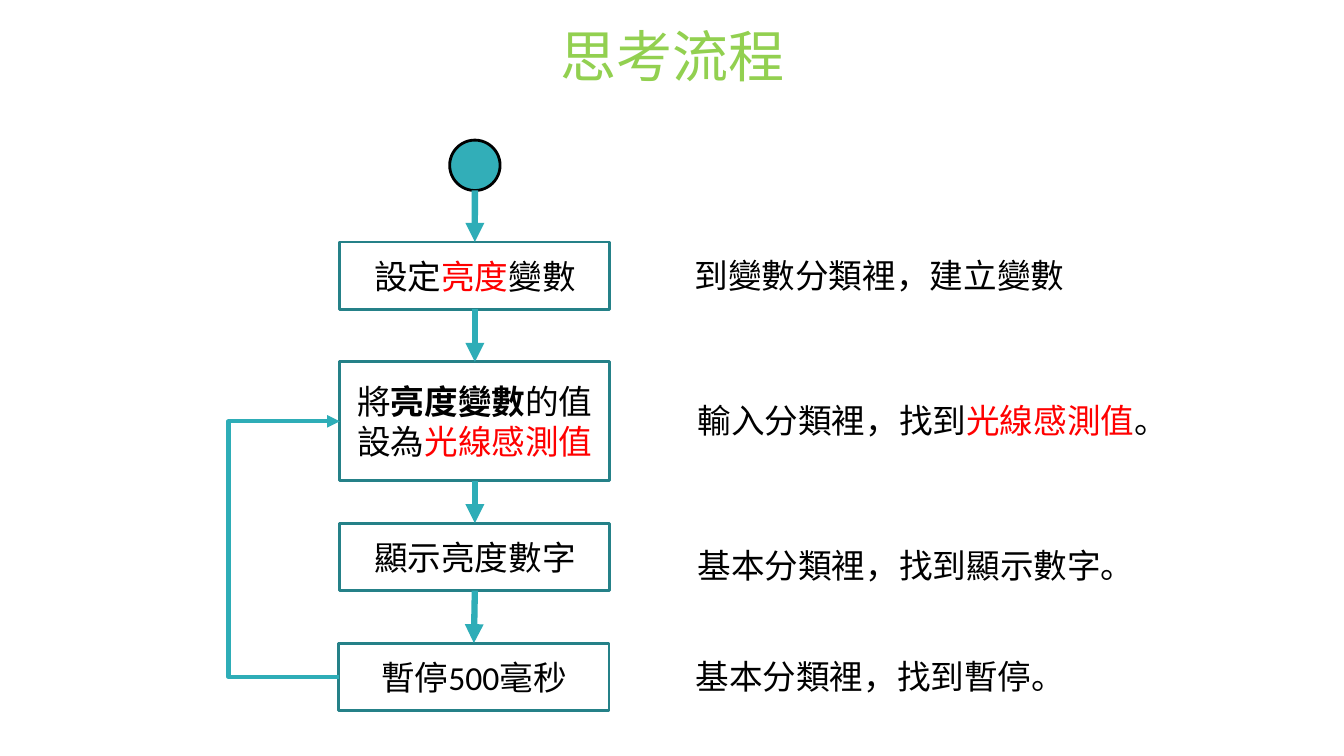
from lxml.etree import SubElement
from pptx import Presentation
from pptx.dml.color import RGBColor
from pptx.enum.shapes import MSO_CONNECTOR, MSO_SHAPE
from pptx.enum.text import MSO_ANCHOR, MSO_AUTO_SIZE, PP_ALIGN
from pptx.oxml.ns import qn
from pptx.util import Inches, Pt

WIDTH, HEIGHT = Inches(13.33), Inches(7.5)
FONT = "Calibri"
GREEN = RGBColor(0x92, 0xD0, 0x50)
TEAL = RGBColor(0x32, 0xAE, 0xB8)
ARROW = RGBColor(0x2E, 0xAD, 0xB7)
EDGE = RGBColor(0x25, 0x81, 0x88)
BLACK = RGBColor(0, 0, 0)
RED = RGBColor(0xFF, 0, 0)

# Places are percentages of the slide's width and height
STEP_WIDTH, ROW_HEIGHT = 20.1, 8.93
NOTE_HEIGHT = 6.67
LOOP_LEFT = 17.1

# Connection sites of a rectangle
TOP, LEFT, BOTTOM = 0, 1, 2

# Each step: left, top, height, spans of (text, colour, bold)
STEPS = [
    (25.28, 32, ROW_HEIGHT,
     [("設定", BLACK, False), ("亮度", RED, False), ("變數", BLACK, False)]),
    (25.28, 47.87, 15.73,
     [("將", BLACK, False), ("亮度變數", BLACK, True),
      ("的值設為", BLACK, False), ("光線感測值", RED, False)]),
    (25.28, 69.2, ROW_HEIGHT, [("顯示亮度數字", BLACK, False)]),
    (25.21, 85.07, ROW_HEIGHT, [("暫停500毫秒", BLACK, False)]),
]

# Each note: left, top, width, spans
NOTES = [
    (50.94, 33.07, 30.08, [("到變數分類裡，建立變數", BLACK, False)]),
    (51.16, 52.27, 36.83,
     [("輸入分類裡，找到", BLACK, False), ("光線感測值", RED, False),
      ("。", BLACK, False)]),
    (51.16, 71.47, 35.41, [("基本分類裡，找到顯示數字。", BLACK, False)]),
    (51.01, 86.13, 29.26, [("基本分類裡，找到暫停。", BLACK, False)]),
]


def across(percent):
    return round(WIDTH * percent / 100)


def down(percent):
    return round(HEIGHT * percent / 100)


def place(left, top, width, height):
    return across(left), down(top), across(width), down(height)


def write(box, spans, size=24, align=PP_ALIGN.LEFT):
    para = box.text_frame.paragraphs[0]
    para.alignment = align
    for text, colour, bold in spans:
        span = para.add_run()
        span.text = text
        span.font.name = FONT
        span.font.size = Pt(size)
        span.font.bold = bold
        span.font.color.rgb = colour


def add_title(page, text):
    box = page.shapes.add_textbox(*place(6.9, 1.73, 86.27, 11.07))
    box.text_frame.word_wrap = True
    box.text_frame.vertical_anchor = MSO_ANCHOR.MIDDLE
    write(box, [(text, GREEN, False)], 40, PP_ALIGN.CENTER)


def add_note(page, left, top, width, spans):
    box = page.shapes.add_textbox(*place(left, top, width, NOTE_HEIGHT))
    box.text_frame.word_wrap = False
    box.text_frame.auto_size = MSO_AUTO_SIZE.SHAPE_TO_FIT_TEXT
    write(box, spans)


def add_node(page, kind, position, edge):
    node = page.shapes.add_shape(kind, *position)
    node.shadow.inherit = False
    node.fill.background()
    node.line.color.rgb = edge
    node.line.width = Pt(2)
    return node


def add_start(page):
    start = add_node(page, MSO_SHAPE.FLOWCHART_CONNECTOR,
                     place(33.46, 18.53, 3.75, 6.67), BLACK)
    start.fill.solid()
    start.fill.fore_color.rgb = TEAL
    return start


def add_step(page, left, top, height, spans):
    step = add_node(page, MSO_SHAPE.FLOWCHART_PROCESS,
                    place(left, top, STEP_WIDTH, height), EDGE)
    step.text_frame.word_wrap = True
    step.text_frame.vertical_anchor = MSO_ANCHOR.MIDDLE
    write(step, spans, align=PP_ALIGN.CENTER)
    return step


def add_arrow(page, kind, target, side, weight, origin=(0, 0)):
    arrow = page.shapes.add_connector(kind, *origin, *origin)
    arrow.end_connect(target, side)
    arrow.line.color.rgb = ARROW
    arrow.line.width = Pt(weight)
    # The line element exists once its colour is set
    outline = arrow._element.spPr.find(qn("a:ln"))
    SubElement(outline, qn("a:tailEnd"), type="triangle")
    SubElement(arrow._element.spPr, qn("a:effectLst"))
    return arrow


def add_loop(page, source, target):
    loop = add_arrow(page, MSO_CONNECTOR.ELBOW, target, LEFT, 3)
    loop.begin_connect(source, LEFT)
    # The bend lies left of both ends, as a multiple of the connector's width
    bend = (across(LOOP_LEFT) - loop.begin_x) / (loop.end_x - loop.begin_x)
    guides = loop._element.spPr.find(qn("a:prstGeom")).get_or_add_avLst()
    SubElement(guides, qn("a:gd"), name="adj1",
               fmla=f"val {round(bend * 100000)}")


def main():
    deck = Presentation()
    deck.slide_width, deck.slide_height = WIDTH, HEIGHT
    page = deck.slides.add_slide(deck.slide_layouts[6])
    add_title(page, "思考流程")

    # Flow chart
    start = add_start(page)
    steps = [add_step(page, *step) for step in STEPS]
    start_foot = start.left + start.width // 2, start.top + start.height
    add_arrow(page, MSO_CONNECTOR.STRAIGHT, steps[0], TOP, 4.5, start_foot)
    for upper, lower in zip(steps, steps[1:]):
        arrow = add_arrow(page, MSO_CONNECTOR.STRAIGHT, lower, TOP, 4.5)
        arrow.begin_connect(upper, BOTTOM)
    add_loop(page, steps[3], steps[1])

    # Explanations
    for note in NOTES:
        add_note(page, *note)
    deck.save("out.pptx")


if __name__ == "__main__":
    main()
